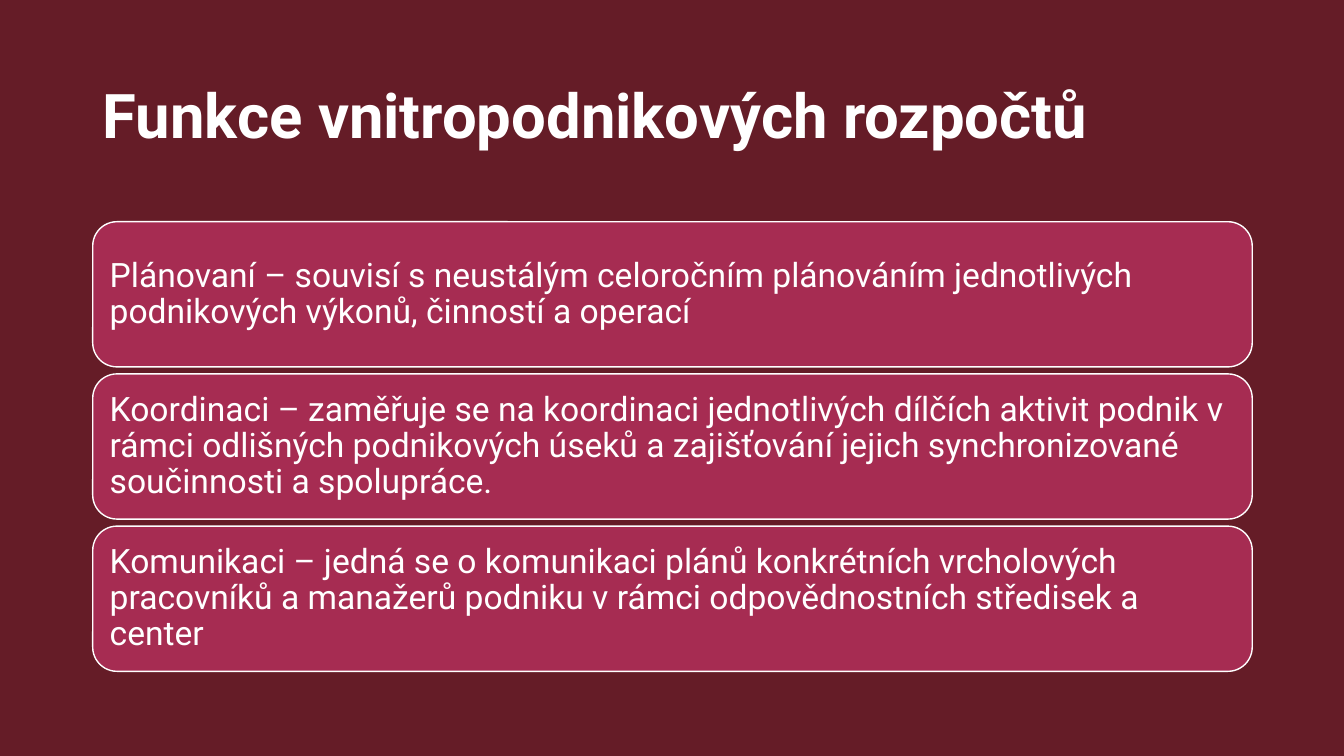
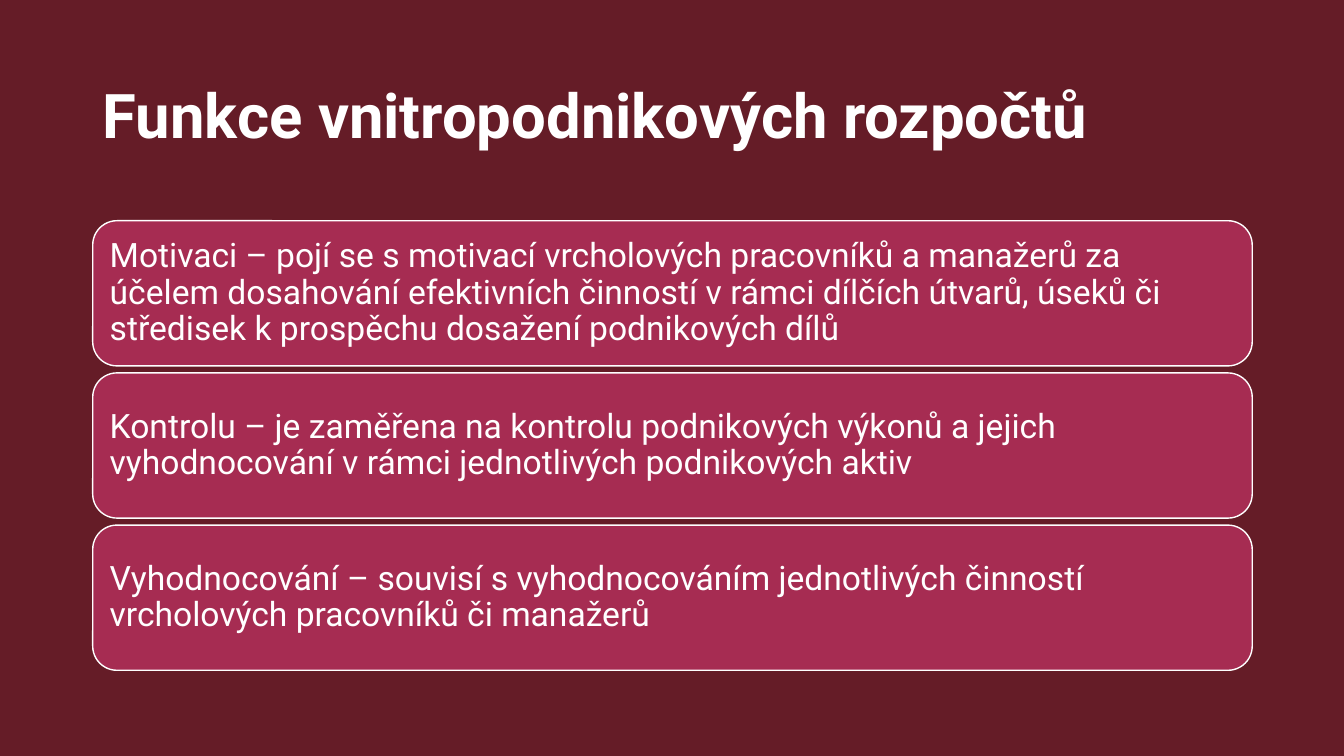
from dataclasses import dataclass

import pptx
import pptx.dml.color
import pptx.enum.shapes
import pptx.enum.text
import pptx.presentation
import pptx.slide
import pptx.text.text
import pptx.util
from pptx.util import Inches


@dataclass(frozen=True)
class Theme:
    background: str = "651C27"
    card: str = "A62C52"
    light: str = "FFFFFF"
    font: str = "Roboto"
    title_size: int = 44
    card_size: int = 24


@dataclass(frozen=True)
class CardSlide:
    title: str
    first_top: float
    cards: tuple[str, ...]


THEME = Theme()
LEFT, WIDTH = 0.92, 11.5
CARD_HEIGHT, CARD_PITCH = 1.44, 1.51
TITLE = "Funkce vnitropodnikových rozpočtů"

SLIDES = (
    CardSlide(TITLE, 2.2, (
        "Plánovaní – souvisí s neustálým celoročním plánováním jednotlivých "
        "podnikových výkonů, činností a operací",
        "Koordinaci – zaměřuje se na koordinaci jednotlivých dílčích aktivit podnik "
        "v rámci odlišných podnikových úseků a zajišťování jejich synchronizované "
        "součinnosti a spolupráce.",
        "Komunikaci – jedná se o komunikaci plánů konkrétních vrcholových pracovníků "
        "a manažerů podniku v rámci odpovědnostních středisek a center",
    )),
    CardSlide(TITLE, 2.19, (
        "Motivaci – pojí se s motivací vrcholových pracovníků a manažerů za účelem "
        "dosahování efektivních činností v rámci dílčích útvarů, úseků či středisek "
        "k prospěchu dosažení podnikových dílů",
        "Kontrolu – je zaměřena na kontrolu podnikových výkonů a jejich vyhodnocování "
        "v rámci jednotlivých podnikových aktiv",
        "Vyhodnocování – souvisí s vyhodnocováním jednotlivých činností vrcholových "
        "pracovníků či manažerů",
    )),
)


def rgb(value: str) -> pptx.dml.color.RGBColor:
    return pptx.dml.color.RGBColor.from_string(value)


def write_text(frame: pptx.text.text.TextFrame, text: str, size: int, bold: bool,
               line_spacing: float) -> None:
    """Fill a frame with one light, left-aligned, vertically centred paragraph."""
    frame.word_wrap = True
    frame.auto_size = pptx.enum.text.MSO_AUTO_SIZE.NONE
    frame.vertical_anchor = pptx.enum.text.MSO_ANCHOR.MIDDLE
    frame.text = text
    paragraph = frame.paragraphs[0]
    paragraph.alignment = pptx.enum.text.PP_ALIGN.LEFT
    paragraph.line_spacing = line_spacing
    paragraph.font.name = THEME.font
    paragraph.font.size = pptx.util.Pt(size)
    paragraph.font.bold = bold
    paragraph.font.color.rgb = rgb(THEME.light)


def add_card(slide: pptx.slide.Slide, top: float, text: str) -> None:
    shape = slide.shapes.add_shape(
        pptx.enum.shapes.MSO_SHAPE.ROUNDED_RECTANGLE,
        Inches(LEFT), Inches(top), Inches(WIDTH), Inches(CARD_HEIGHT))
    shape.shadow.inherit = False
    shape.fill.solid()
    shape.fill.fore_color.rgb = rgb(THEME.card)
    shape.line.color.rgb = rgb(THEME.light)
    shape.line.width = pptx.util.Pt(1)
    frame = shape.text_frame
    frame.margin_left = frame.margin_right = Inches(0.1)
    frame.margin_top = frame.margin_bottom = Inches(0.1)
    write_text(frame, text, THEME.card_size, False, 0.9)


def prepare_layout(presentation: pptx.presentation.Presentation) -> pptx.slide.SlideLayout:
    """Set the shared background and title place; return the title-only layout."""
    background = presentation.slide_master.background.fill
    background.solid()
    background.fore_color.rgb = rgb(THEME.background)
    layout = presentation.slide_layouts.get_by_name("Title Only")
    title = layout.placeholders[0]
    title.left, title.top = Inches(LEFT), Inches(0.4)
    title.width, title.height = Inches(WIDTH), Inches(1.45)
    return layout


def add_card_slide(presentation: pptx.presentation.Presentation,
                   layout: pptx.slide.SlideLayout, content: CardSlide) -> None:
    slide = presentation.slides.add_slide(layout)
    write_text(slide.shapes.title.text_frame, content.title, THEME.title_size, True, 1.0)
    for index, text in enumerate(content.cards):
        add_card(slide, content.first_top + index * CARD_PITCH, text)


def main() -> None:
    presentation = pptx.Presentation()
    presentation.slide_width = Inches(13.33)
    presentation.slide_height = Inches(7.5)
    layout = prepare_layout(presentation)
    for content in SLIDES:
        add_card_slide(presentation, layout, content)
    presentation.save("out.pptx")


if __name__ == "__main__":
    main()
